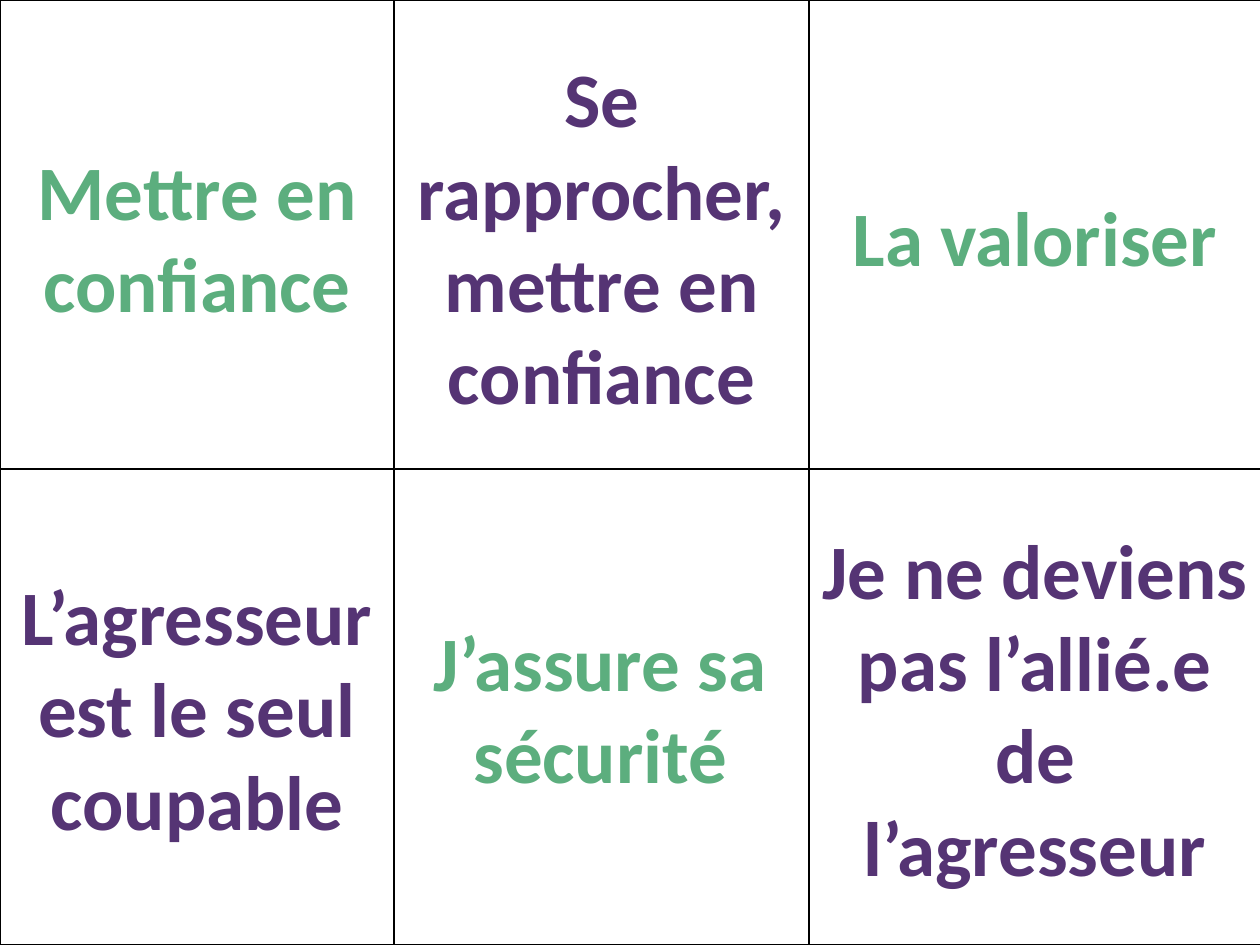
import dataclasses

import pptx
import pptx.dml.color
import pptx.enum.shapes
import pptx.enum.text
import pptx.util

Inches = pptx.util.Inches


@dataclasses.dataclass(frozen=True)
class Theme:
    green: str = "5CAE7E"
    purple: str = "553474"
    paper: str = "FFFFFF"
    border: str = "000000"
    font: str = "Calibri"
    size: int = 44
    border_width: int = 1


class CardSheet:
    def __init__(self, slide, theme):
        self.slide = slide
        self.theme = theme

    def color(self, value):
        return pptx.dml.color.RGBColor.from_string(value)

    def card(self, column, row, message, color):
        left, width = column
        top, height = row
        card = self.slide.shapes.add_shape(
            pptx.enum.shapes.MSO_SHAPE.RECTANGLE,
            Inches(left), Inches(top), Inches(width), Inches(height))
        card.shadow.inherit = False
        card.fill.solid()
        card.fill.fore_color.rgb = self.color(self.theme.paper)
        card.line.color.rgb = self.color(self.theme.border)
        card.line.width = pptx.util.Pt(self.theme.border_width)

        frame = card.text_frame
        frame.word_wrap = True
        frame.vertical_anchor = pptx.enum.text.MSO_ANCHOR.MIDDLE
        paragraph = frame.paragraphs[0]
        paragraph.text = message
        paragraph.alignment = pptx.enum.text.PP_ALIGN.CENTER
        paragraph.font.name = self.theme.font
        paragraph.font.size = pptx.util.Pt(self.theme.size)
        paragraph.font.bold = True
        paragraph.font.color.rgb = self.color(color)


def main():
    deck = pptx.Presentation()
    deck.slide_width = Inches(10)
    deck.slide_height = Inches(7.5)
    theme = Theme()
    sheet = CardSheet(deck.slides.add_slide(deck.slide_layouts[6]), theme)

    left, center, right = (0, 3.13), (3.13, 3.29), (6.42, 3.59)
    wide_center = (3.02, 3.49)
    upper, lower = (0, 3.74), (3.72, 3.78)

    cards = [
        (left, upper, "Mettre en confiance", theme.green),
        (center, upper, "Se rapprocher, mettre en confiance", theme.purple),
        (wide_center, lower, "J’assure sa sécurité", theme.green),
        (right, upper, "La valoriser", theme.green),
        (left, lower, "L’agresseur est le seul coupable", theme.purple),
        (right, lower, "Je ne deviens pas l’allié.e de l’agresseur", theme.purple),
    ]
    for column, row, message, color in cards:
        sheet.card(column, row, message, color)

    deck.save("out.pptx")


if __name__ == "__main__":
    main()
